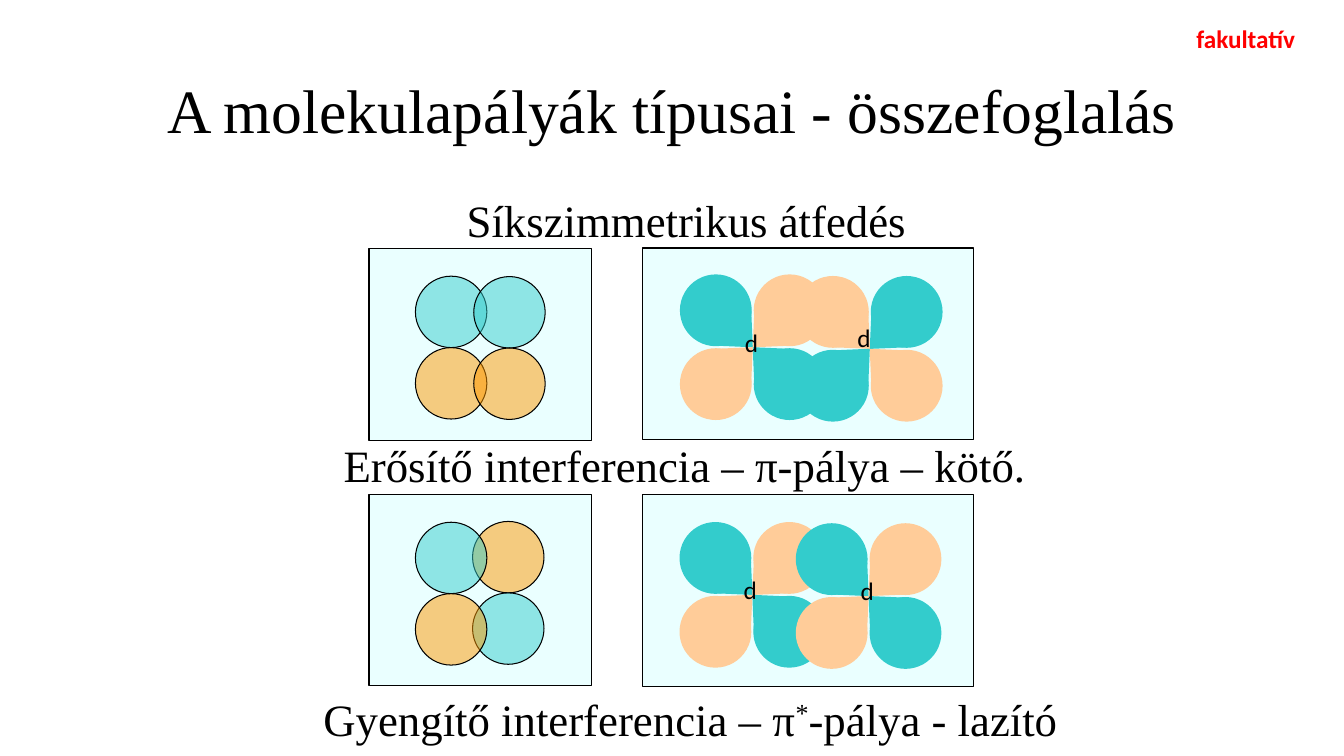
from pptx import Presentation
from pptx.dml.color import RGBColor
from pptx.enum.shapes import MSO_SHAPE
from pptx.enum.text import MSO_ANCHOR, MSO_AUTO_SIZE, PP_ALIGN
from pptx.oxml.ns import qn
from pptx.util import Cm, Pt
from lxml.etree import SubElement

TEAL, ORANGE, PEACH, PALE = "33CCCC", "FF9900", "FFCC99", "CCFFFF"
BLACK, RED = "000000", "FF0000"


def color(hex_code):
    return RGBColor.from_string(hex_code)


def write(para, text, font="Times New Roman", size=32, fill=BLACK, bold=False, baseline=0):
    """Add a formatted span; baseline is a percentage, above 0 for superscript."""
    span = para.add_run()
    span.text = text
    span.font.name = font
    span.font.size = Pt(size)
    span.font.bold = bold
    span.font.color.rgb = color(fill)
    if baseline:
        span.font._element.set("baseline", str(baseline * 1000))


class OrbitalSlide:
    """Draws the elements of the slide; all lengths are in centimetres."""

    circle = 1.8
    lobe = 1.81
    lobe_offset = 0.93
    tip_width, tip_height = 1.3, 0.71
    tip_offset = 0.25

    def __init__(self, deck):
        self.page = deck.slides.add_slide(deck.slide_layouts[5])

    def title(self, text, left, top, width, height):
        box = self.page.shapes.title
        box.left, box.top, box.width, box.height = map(Cm, (left, top, width, height))
        frame = box.text_frame
        frame.vertical_anchor = MSO_ANCHOR.MIDDLE
        para = frame.paragraphs[0]
        para.alignment = PP_ALIGN.CENTER
        para.line_spacing = 0.9
        write(para, text, size=44)

    def text(self, spans, left, top, width, height, parent=None):
        """Add a text box from (text, format) pairs."""
        shapes = (parent or self.page).shapes
        box = shapes.add_textbox(*map(Cm, (left, top, width, height)))
        frame = box.text_frame
        frame.word_wrap = False
        frame.auto_size = MSO_AUTO_SIZE.SHAPE_TO_FIT_TEXT
        for text, style in spans:
            write(frame.paragraphs[0], text, **style)

    def shape(self, kind, left, top, width, height, fill, opacity=100,
              outlined=False, rotation=0, parent=None):
        shapes = (parent or self.page).shapes
        shape = shapes.add_shape(kind, *map(Cm, (left, top, width, height)))
        shape.shadow.inherit = False
        shape.rotation = rotation
        shape.fill.solid()
        shape.fill.fore_color.rgb = color(fill)
        if opacity < 100:
            tint = shape._element.spPr.find(qn("a:solidFill"))[0]
            SubElement(tint, qn("a:alpha")).set("val", str(opacity * 1000))
        if outlined:
            shape.line.color.rgb = color(BLACK)
            shape.line.width = Pt(0.75)
        else:
            shape.line.fill.background()

    def panel(self, left, top, width, height):
        self.shape(MSO_SHAPE.RECTANGLE, left, top, width, height, PALE, 40, outlined=True)

    def p_orbital(self, left, top, fills):
        """Stack two touching circles, the upper one first in fills."""
        group = self.page.shapes.add_group_shape()
        for row, fill in enumerate(fills):
            self.shape(MSO_SHAPE.OVAL, left, top + row * self.circle, self.circle,
                       self.circle, fill, 50, outlined=True, parent=group)

    def d_orbital(self, x, y, label_left, label_top, mirrored=False):
        """Draw four drop-shaped lobes around the centre (x, y)."""
        group = self.page.shapes.add_group_shape()
        corners = [(-1, -1, 135), (1, -1, 225), (1, 1, 315), (-1, 1, 45)]
        for index, (across, down, angle) in enumerate(corners):
            if mirrored:
                across, angle = -across, 360 - angle
            fill = (TEAL, PEACH)[index % 2]
            parts = [(MSO_SHAPE.OVAL, self.lobe, self.lobe, self.lobe_offset, 0),
                     (MSO_SHAPE.ISOSCELES_TRIANGLE, self.tip_width, self.tip_height,
                      self.tip_offset, angle)]
            for kind, width, height, offset, rotation in parts:
                self.shape(kind, x + across * offset - width / 2,
                           y + down * offset - height / 2, width, height, fill,
                           rotation=rotation, parent=group)
        self.text([("d", {"font": "Calibri", "size": 18})],
                  label_left, label_top, 0.86, 1.02, group)


def main():
    deck = Presentation()
    deck.slide_width, deck.slide_height = Cm(33.87), Cm(19.05)
    slide = OrbitalSlide(deck)
    slide.title("A molekulapályák típusai - összefoglalás", 2.34, 1.02, 29.21, 3.68)

    for left, top, width in [(16.2, 12.47, 8.33), (16.2, 6.25, 8.33),
                             (9.3, 12.45, 5.61), (9.3, 6.27, 5.61)]:
        slide.panel(left, top, width, 4.83)

    slide.p_orbital(10.47, 6.96, (TEAL, ORANGE))
    slide.p_orbital(11.94, 6.97, (TEAL, ORANGE))
    slide.p_orbital(11.91, 13.14, (ORANGE, TEAL))
    slide.p_orbital(10.47, 13.16, (TEAL, ORANGE))

    slide.d_orbital(18.97, 8.75, 18.52, 8.13)
    slide.d_orbital(18.96, 14.99, 18.49, 14.35)
    slide.d_orbital(21.92, 8.79, 21.36, 8.0, mirrored=True)
    slide.d_orbital(21.89, 15.02, 21.44, 14.38)

    slide.text([("Síkszimmetrikus átfedés", {})], 11.51, 4.72, 11.68, 1.62)
    slide.text([("Erősítő interferencia – π-pálya – kötő.", {})], 8.41, 10.9, 17.86, 1.62)
    slide.text([("Gyengítő interferencia – π", {}), ("*", {"baseline": 30}),
                ("-pálya - lazító", {})], 7.9, 17.3, 19.23, 1.62)
    slide.text([("fakultatív", {"font": "Calibri", "size": 18, "fill": RED, "bold": True})],
               29.9, 0.46, 3.02, 1.02)
    deck.save("out.pptx")


if __name__ == "__main__":
    main()
